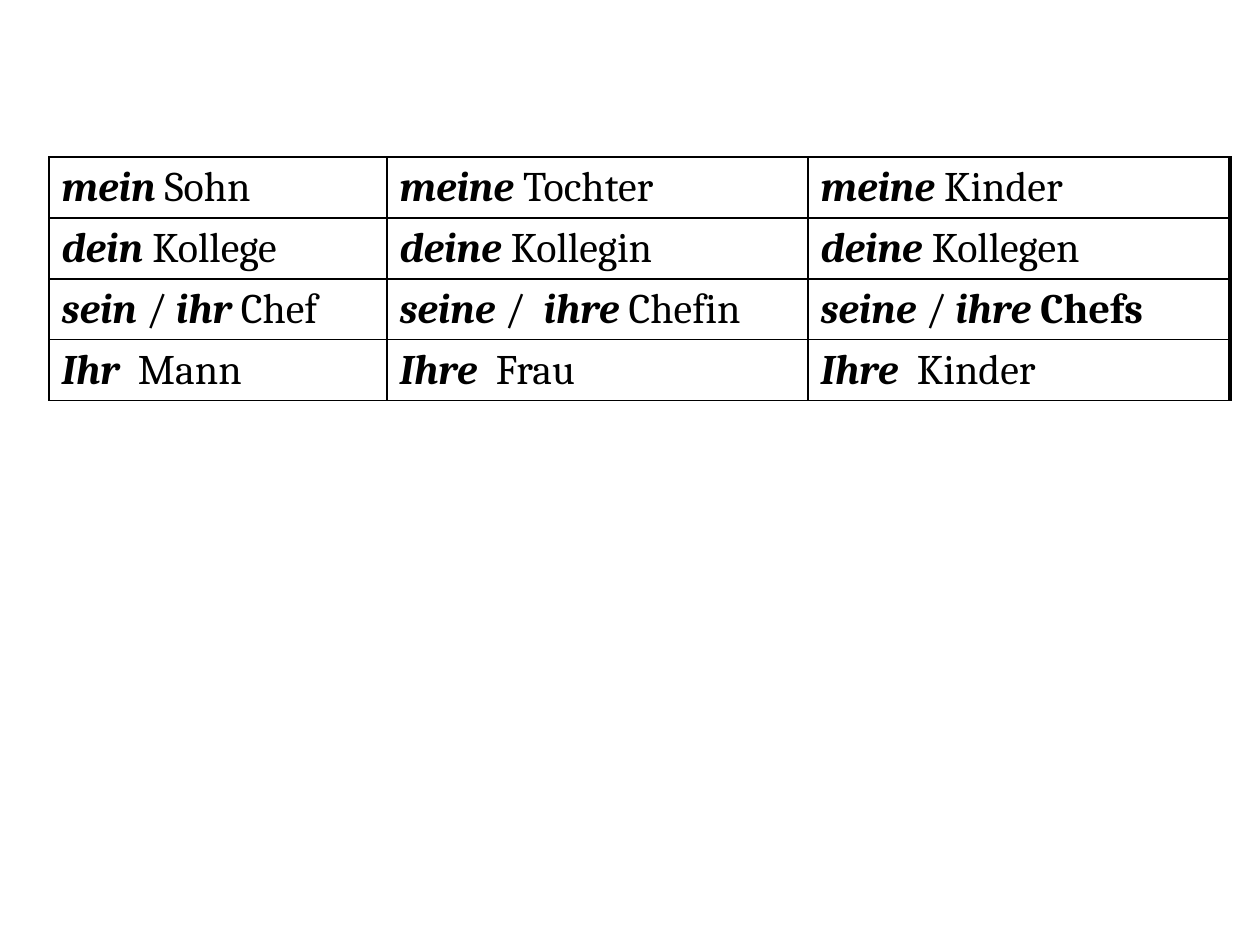
from lxml import etree
from pptx import Presentation
from pptx import util as u
from pptx.dml import color as dml
from pptx.oxml import ns

EMU_PER_PX = 914400 // 126

# Possessives stand between asterisks, bold nouns between carets
POSSESSIVES = [
    ["*mein* Sohn", "*meine* Tochter", "*meine* Kinder"],
    ["*dein* Kollege", "*deine* Kollegin", "*deine* Kollegen"],
    ["*sein* / *ihr* Chef", "*seine */ * ihre *Chefin", "*seine */ *ihre*^ Chefs^"],
    ["*Ihr*  Mann", "*Ihre*  Frau", "*Ihre*  Kinder"],
]


def px(length):
    return u.Emu(length * EMU_PER_PX)


def rgb(hex_code):
    return dml.RGBColor.from_string(hex_code)


def add_text(paragraph, words, *, font, size, color, bold=False, italic=False):
    run = paragraph.add_run()
    run.text = words
    run.font.name = font
    run.font.size = u.Pt(size)
    run.font.color.rgb = rgb(color)
    run.font.bold = bold
    run.font.italic = italic


class SlideBuilder:
    font, size, ink = "Cambria", 24, "000000"
    row_line, column_line, closing_line = 0.75, 1, 3

    def __init__(self, slide):
        self.slide = slide

    def phrase(self, paragraph, marked):
        """Write marked-up words as runs."""
        for i, part in enumerate(marked.split("*")):
            for j, words in enumerate(part.split("^")):
                if words:
                    add_text(paragraph, words, font=self.font, size=self.size,
                             color=self.ink, bold=i % 2 == 1 or j % 2 == 1,
                             italic=i % 2 == 1)

    def borders(self, cell, **widths):
        """Draw the cell's sides, given in points as L, R, T, B."""
        properties = cell._tc.get_or_add_tcPr()
        for side, width in widths.items():
            line = etree.SubElement(properties, ns.qn(f"a:ln{side}"),
                                    w=str(u.Pt(width)))
            fill = etree.SubElement(line, ns.qn("a:solidFill"))
            etree.SubElement(fill, ns.qn("a:srgbClr"), val=self.ink)

    def table(self, rows, left, top, column_widths, row_height):
        grid = self.slide.shapes.add_table(
            len(rows), len(column_widths), px(left), px(top),
            px(sum(column_widths)), px(row_height * len(rows))).table
        grid.first_row = grid.horz_banding = False
        for column, width in zip(grid.columns, column_widths):
            column.width = px(width)
        # Thin outer left, heavy outer right
        sides = ([self.row_line] + [self.column_line] * (len(column_widths) - 1)
                 + [self.closing_line])
        for r, phrases in enumerate(rows):
            grid.rows[r].height = px(row_height)
            for c, marked in enumerate(phrases):
                cell = grid.cell(r, c)
                self.borders(cell, L=sides[c], R=sides[c + 1],
                             T=self.row_line, B=self.row_line)
                cell.fill.background()
                self.phrase(cell.text_frame.paragraphs[0], marked)


def main():
    deck = Presentation()
    deck.slide_width, deck.slide_height = u.Inches(10), u.Inches(7.5)
    builder = SlideBuilder(deck.slides.add_slide(deck.slide_layouts[6]))

    # Possessive articles: masculine, feminine, plural
    builder.table(POSSESSIVES, left=49, top=157,
                  column_widths=[338, 421, 422], row_height=61)
    deck.save("out.pptx")


if __name__ == "__main__":
    main()
